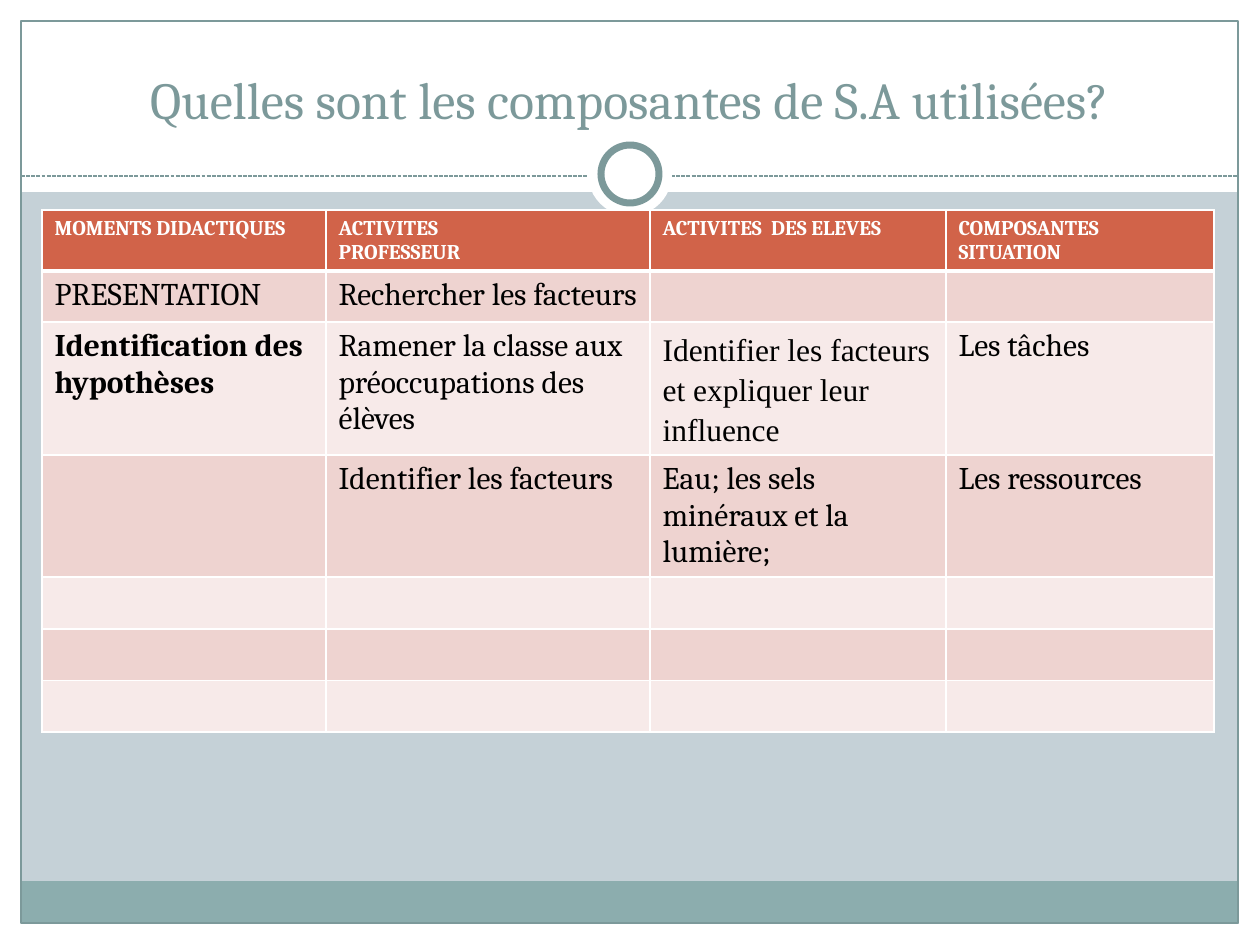
from lxml import etree
from pptx import Presentation
from pptx import util as u
from pptx.dml.color import RGBColor
from pptx.enum import dml, shapes, text
from pptx.oxml.ns import qn

SCALE = 914400 / 126
WHITE, TEAL, BAND = "FFFFFF", "7C999A", "8CADAE"
HEADER, ROW_DARK, ROW_LIGHT = "D16349", "EED3D0", "F7EAE9"
FONT = "Cambria"

COLUMNS = [284, 324, 296, 268]
ROWS = [61, 51, 133, 121, 52, 52, 51]
CELLS = [
    ["MOMENTS DIDACTIQUES", "ACTIVITES\nPROFESSEUR",
     "ACTIVITES  DES ELEVES", "COMPOSANTES\nSITUATION"],
    ["PRESENTATION", "Rechercher les facteurs", "", ""],
    ["Identification des hypothèses",
     "Ramener la classe aux préoccupations des élèves",
     "Identifier les facteurs et expliquer leur influence", "Les tâches"],
    ["", "Identifier les facteurs",
     "Eau; les sels minéraux et la lumière;", "Les ressources"],
] + [[""] * 4] * 3


def px(n):
    return u.Emu(round(n * SCALE))


def box(*values):
    return [px(v) for v in values]


def color(value):
    return RGBColor.from_string(value)


def add_run(p, content, size, ink, bold=False, font=FONT):
    r = p.add_run()
    r.text = content
    r.font.size = u.Pt(size)
    r.font.name = font
    r.font.bold = bold
    r.font.color.rgb = color(ink)


def add_block(s, kind, place, fill=None, line=None, width=0.75):
    sp = s.shapes.add_shape(kind, *box(*place))
    sp.shadow.inherit = False
    if fill:
        sp.fill.solid()
        sp.fill.fore_color.rgb = color(fill)
    else:
        sp.fill.background()
    if line:
        sp.line.color.rgb = color(line)
        sp.line.width = u.Pt(width)
    else:
        sp.line.fill.background()


def add_divider(s, x1, x2, y):
    line = s.shapes.add_connector(shapes.MSO_CONNECTOR.STRAIGHT, *box(x1, y, x2, y))
    line.line.color.rgb = color(TEAL)
    line.line.width = u.Pt(0.75)
    line.line.dash_style = dml.MSO_LINE.SQUARE_DOT
    etree.SubElement(line._element.spPr, qn("a:effectLst"))


def add_frame(s):
    rect, oval = shapes.MSO_SHAPE.RECTANGLE, shapes.MSO_SHAPE.OVAL
    # White margins and title band
    for place in [(0, 924, 1260, 21), (0, 0, 1260, 192),
                  (0, 0, 21, 945), (1239, 0, 21, 945)]:
        add_block(s, rect, place, WHITE)
    # Footer band, outline and divider
    add_block(s, rect, (21, 881, 1217, 43), BAND)
    add_block(s, rect, (21, 21, 1217, 902), line=TEAL)
    add_divider(s, 21, 1239, 176)
    # Ring on the divider
    add_block(s, oval, (588, 132, 84, 84), WHITE)
    add_block(s, oval, (601, 145, 58, 58), WHITE, TEAL, 4)


def add_title(s, content):
    title = s.shapes.title
    s.shapes._spTree.append(title._element)
    title.left, title.top, title.width, title.height = box(42, 32, 1176, 104)
    tf = title.text_frame
    tf.word_wrap = True
    tf.auto_size = text.MSO_AUTO_SIZE.NONE
    tf.vertical_anchor = text.MSO_ANCHOR.BOTTOM
    p = tf.paragraphs[0]
    p.alignment = text.PP_ALIGN.CENTER
    add_run(p, content, 29.7, TEAL)


def set_borders(cell, bottom):
    tc_pr = cell._tc.get_or_add_tcPr()
    for i, (side, width) in enumerate(
            [("L", 1), ("R", 1), ("T", 1), ("B", bottom)]):
        ln = etree.Element(qn("a:ln" + side), w=str(u.Pt(width)))
        fill = etree.SubElement(ln, qn("a:solidFill"))
        etree.SubElement(fill, qn("a:srgbClr"), val=WHITE)
        tc_pr.insert(i, ln)


def fill_cell(cell, content, row, column):
    header = row == 0
    cell.fill.solid()
    cell.fill.fore_color.rgb = color(
        HEADER if header else ROW_DARK if row % 2 else ROW_LIGHT)
    # The header and the row below it share a thick rule
    set_borders(cell, 3 if header else 1)
    if row == 1:
        cell._tc.tcPr.find(qn("a:lnT")).set("w", str(u.Pt(3)))
    if not content:
        return
    tf = cell.text_frame
    spaced = (row, column) == (2, 2)
    for i, part in enumerate(content.split("\n")):
        p = tf.add_paragraph() if i else tf.paragraphs[0]
        if spaced:
            p.line_spacing = 1.15
            p.space_after = u.Pt(10)
        add_run(p, part, 12 if header else 18, WHITE if header else "000000",
                header or (row, column) == (2, 0),
                "Times New Roman" if spaced else FONT)


def add_grid(s):
    place = box(42, 210, sum(COLUMNS), sum(ROWS))
    table = s.shapes.add_table(len(ROWS), len(COLUMNS), *place).table
    for column, width in zip(table.columns, COLUMNS):
        column.width = px(width)
    for i, height in enumerate(ROWS):
        table.rows[i].height = px(height)
        for j, content in enumerate(CELLS[i]):
            fill_cell(table.cell(i, j), content, i, j)


def main():
    prs = Presentation()
    prs.slide_width, prs.slide_height = box(1260, 945)
    s = prs.slides.add_slide(prs.slide_layouts[5])
    s.background.fill.solid()
    s.background.fill.fore_color.rgb = color("C5D1D7")
    add_frame(s)
    add_title(s, "Quelles sont les composantes de S.A utilisées?")
    add_grid(s)
    prs.save("out.pptx")


if __name__ == "__main__":
    main()
